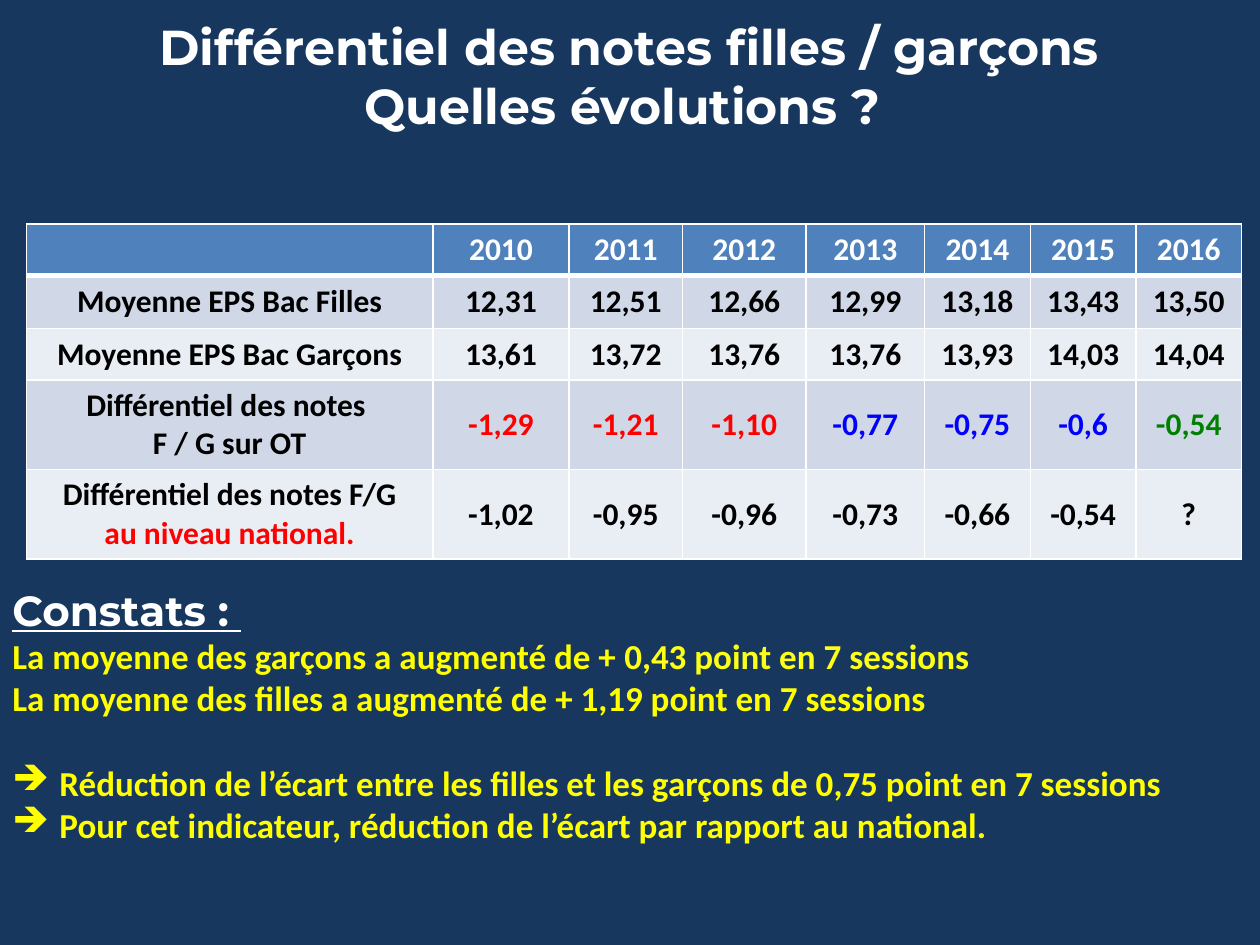
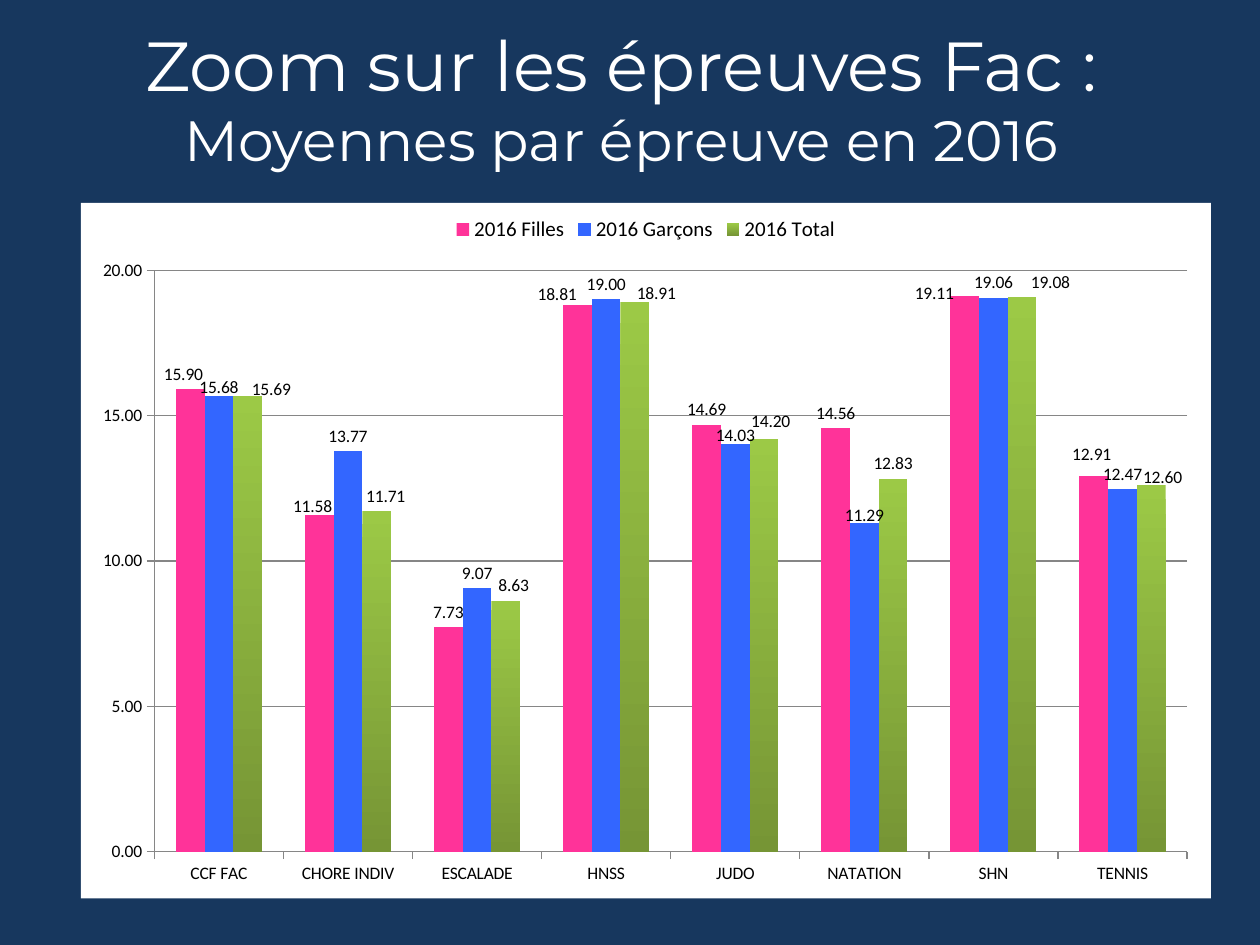
from dataclasses import dataclass
from typing import Optional

from lxml.etree import SubElement
from pptx import Presentation
from pptx.chart.data import CategoryChartData
from pptx.dml.color import RGBColor
from pptx.enum.chart import XL_CHART_TYPE, XL_LABEL_POSITION, XL_LEGEND_POSITION, XL_TICK_MARK
from pptx.enum.text import MSO_ANCHOR, MSO_AUTO_SIZE, PP_ALIGN
from pptx.oxml import parse_xml
from pptx.oxml.ns import nsdecls, qn
from pptx.util import Cm, Pt

NAVY = RGBColor(0x17, 0x37, 0x5E)
WHITE = RGBColor(0xFF, 0xFF, 0xFF)
BLACK = RGBColor(0x00, 0x00, 0x00)
YELLOW = RGBColor(0xFF, 0xFF, 0x00)
LEMON = RGBColor(0xFD, 0xFF, 0x17)
RED = RGBColor(0xFF, 0x00, 0x00)
BLUE = RGBColor(0x00, 0x00, 0xFF)
GREEN = RGBColor(0x00, 0x80, 0x00)
STEEL = RGBColor(0x4F, 0x81, 0xBD)
MIST = RGBColor(0xD0, 0xD8, 0xE8)
PALE = RGBColor(0xE9, 0xED, 0xF4)
GREY = RGBColor(0x86, 0x86, 0x86)
PINK = RGBColor(0xFF, 0x33, 0x99)
AZURE = RGBColor(0x33, 0x66, 0xFF)
LIME = RGBColor(0x9C, 0xC9, 0x46)
OLIVE = RGBColor(0x76, 0x95, 0x35)
HEAD = "Montserrat"
BODY = "Calibri"


@dataclass
class Box:
    left: float
    top: float
    width: float
    height: float

    def lengths(self) -> tuple:
        return Cm(self.left), Cm(self.top), Cm(self.width), Cm(self.height)


@dataclass
class Line:
    text: str
    size: float
    bold: bool = False


@dataclass
class Row:
    label: list
    marks: list
    height: float
    tints: list


@dataclass
class Group:
    name: str
    marks: list
    color: Optional[RGBColor]
    shifts: dict


ROWS = [
    Row([], [str(year) for year in range(2010, 2017)], 1.04, [WHITE] * 7),
    Row([("Moyenne EPS Bac Filles", BLACK)],
        ["12,31", "12,51", "12,66", "12,99", "13,18", "13,43", "13,50"], 1.06, [BLACK] * 7),
    Row([("Moyenne EPS Bac Garçons", BLACK)],
        ["13,61", "13,72", "13,76", "13,76", "13,93", "14,03", "14,04"], 1.04, [BLACK] * 7),
    Row([("Différentiel des notes ", BLACK), ("F / G sur OT", BLACK)],
        ["-1,29", "-1,21", "-1,10", "-0,77", "-0,75", "-0,6", "-0,54"], 1.78,
        [RED] * 3 + [BLUE] * 3 + [GREEN]),
    Row([("Différentiel des notes F/G", BLACK), ("au niveau national.", RED)],
        ["-1,02", "-0,95", "-0,96", "-0,73", "-0,66", "-0,54", "?"], 1.78, [BLACK] * 7),
]
WIDTHS = [8.2, 2.74, 2.29, 2.49, 2.39, 2.13, 2.13, 2.13]

TESTS = ["CCF FAC", "CHORE INDIV", "ESCALADE", "HNSS", "JUDO", "NATATION", "SHN", "TENNIS"]
GROUPS = [
    Group("2016 Filles", [15.9, 11.58, 7.73, 18.81, 14.69, 14.56, 19.11, 12.91], PINK,
          {0: (-0.6, 0), 1: (-0.6, 0.9), 3: (-1.8, 0.6), 6: (-2.7, 1.7), 7: (-0.2, -1)}),
    Group("2016 Garçons", [15.68, 13.77, 9.07, 19, 14.03, 11.29, 19.06, 12.47], AZURE,
          {0: (0, 0.9), 4: (0, 0.9), 5: (0, 1)}),
    Group("2016 Total", [15.69, 11.71, 8.63, 18.91, 14.2, 12.83, 19.08, 12.6], None,
          {0: (2.1, 1.3), 1: (0.8, 0), 2: (0.7, 0), 3: (1.9, 0.9), 4: (0.6, -0.4),
           6: (2.5, 0.1), 7: (1, 1)}),
]


def write(frame, text: str, *, para=None, size: float = 20, font: str = BODY,
          color: RGBColor = WHITE, bold: bool = True, under: bool = False,
          align: PP_ALIGN = PP_ALIGN.LEFT, bullet: str = "", before: float = 0):
    if para is None:
        first = frame.paragraphs[0]
        para = frame.add_paragraph() if first.runs else first
        para.alignment = align
        if bullet:
            props = para._p.get_or_add_pPr()
            props.set("marL", str(Cm(0.95)))
            props.set("indent", str(-Cm(0.95)))
            SubElement(props, qn("a:buChar")).set("char", bullet)
        if before:
            para.space_before = Pt(before)
    run = para.add_run()
    run.text = text
    run.font.size = Pt(size)
    run.font.name = font
    run.font.bold = bold
    run.font.underline = under
    run.font.color.rgb = color
    return para


def add_page(deck, box: Box, lines: list, anchor: MSO_ANCHOR):
    slide = deck.slides.add_slide(deck.slide_layouts[5])
    title = slide.shapes.title
    title.left, title.top, title.width, title.height = box.lengths()
    frame = title.text_frame
    frame.auto_size = MSO_AUTO_SIZE.NONE
    frame.vertical_anchor = anchor
    for line in lines:
        write(frame, line.text, size=line.size, font=HEAD, bold=line.bold,
              align=PP_ALIGN.CENTER)
    return slide


def edge(cell, sides: dict) -> None:
    props = cell._tc.get_or_add_tcPr()
    for place, (side, width) in enumerate(sides.items()):
        props.insert(place, parse_xml(
            f'<a:{side} {nsdecls("a")} w="{Pt(width)}"><a:solidFill>'
            f'<a:srgbClr val="{WHITE}"/></a:solidFill></a:{side}>'))


def add_grid(slide, box: Box) -> None:
    table = slide.shapes.add_table(len(ROWS), len(WIDTHS), *box.lengths()).table
    for column, width in zip(table.columns, WIDTHS):
        column.width = Cm(width)
    for at, row in enumerate(ROWS):
        table.rows[at].height = Cm(row.height)
        fill = STEEL if at == 0 else MIST if at % 2 else PALE
        parts = [row.label] + [[pair] for pair in zip(row.marks, row.tints)]
        for cell, lines in zip(table.rows[at].cells, parts):
            cell.fill.solid()
            cell.fill.fore_color.rgb = fill
            cell.vertical_anchor = MSO_ANCHOR.MIDDLE
            edge(cell, {"lnL": 1, "lnR": 1, "lnT": 3 if at == 1 else 1,
                        "lnB": 3 if at == 0 else 1})
            for text, color in lines:
                write(cell.text_frame, text, size=18, color=color, align=PP_ALIGN.CENTER)


def add_notes(slide, box: Box) -> None:
    frame = slide.shapes.add_textbox(*box.lengths()).text_frame
    frame.word_wrap = True
    write(frame, "Constats : ", size=24, font=HEAD, under=True)
    para = write(frame, "La moyenne des garçons a augmenté de + ", color=YELLOW)
    write(frame, "0,43 point en 7 sessions", para=para, color=LEMON)
    write(frame, "La moyenne des filles a augmenté de + 1,19 point en 7 sessions", color=YELLOW)
    write(frame, "Réduction de l’écart entre les filles et les garçons de 0,75 point en 7 sessions",
          color=YELLOW, bullet="➔", before=24)
    write(frame, "Pour cet indicateur, réduction de l’écart par rapport au national.",
          color=YELLOW, bullet="➔")


def layout(**parts):
    inner = "".join(f'<c:{key} val="{value}"/>' for key, value in parts.items())
    return parse_xml(f'<c:layout {nsdecls("c")}><c:manualLayout>{inner}'
                     f'</c:manualLayout></c:layout>')


def tag(series, group: Group) -> None:
    labels = series.data_labels
    labels.show_value = True
    labels.number_format = "0.00"
    labels.number_format_is_linked = False
    labels.position = XL_LABEL_POSITION.OUTSIDE_END
    for point in group.shifts:
        series.points[point].data_label.position = XL_LABEL_POSITION.OUTSIDE_END
    for label in labels._element.findall(qn("c:dLbl")):
        mark = label.find(qn("c:idx"))
        across, down = group.shifts[int(mark.get("val"))]
        mark.addnext(parse_xml(
            f'<c:numFmt {nsdecls("c")} formatCode="0.00" sourceLinked="0"/>'))
        mark.addnext(layout(x=across / 100, y=down / 100))


def add_bars(slide, box: Box) -> None:
    data = CategoryChartData(number_format="0.00")
    data.categories = TESTS
    for group in GROUPS:
        data.add_series(group.name, group.marks)
    chart = slide.shapes.add_chart(XL_CHART_TYPE.COLUMN_CLUSTERED, *box.lengths(), data).chart
    chart.has_title = False
    chart.font.size = Pt(10)
    chart.font.name = BODY
    chart.font.color.rgb = BLACK
    chart.has_legend = True
    chart.legend.position = XL_LEGEND_POSITION.TOP
    chart.legend.include_in_layout = False
    chart.legend.font.size = Pt(12)
    chart.legend.font.name = BODY
    chart.legend.font.color.rgb = BLACK

    scale = chart.value_axis
    scale.minimum_scale, scale.maximum_scale, scale.major_unit = 0, 20, 5
    scale.tick_labels.number_format = "0.00"
    scale.tick_labels.number_format_is_linked = False
    scale.has_major_gridlines = True
    scale.major_gridlines.format.line.color.rgb = GREY
    for axis in (scale, chart.category_axis):
        axis.major_tick_mark = XL_TICK_MARK.OUTSIDE
        axis.format.line.color.rgb = GREY

    plot = chart.plots[0]
    plot.gap_width = 150
    plot.overlap = 0
    plot.vary_by_categories = False
    for series, group in zip(plot.series, GROUPS):
        fill = series.format.fill
        if group.color is None:
            fill.gradient()
            fill.gradient_angle = 270
            for stop, color in zip(fill.gradient_stops, (LIME, OLIVE)):
                stop.color.rgb = color
        else:
            fill.solid()
            fill.fore_color.rgb = group.color
        tag(series, group)

    root = chart._chartSpace
    area = root.find(qn("c:chart")).find(qn("c:plotArea"))
    for old in area.findall(qn("c:layout")):
        area.remove(old)
    area.insert(0, layout(layoutTarget="inner", xMode="edge", yMode="edge",
                          x=0.065, y=0.097, w=0.914, h=0.836))
    root.find(qn("c:chart")).addnext(parse_xml(
        f'<c:spPr {nsdecls("c", "a")}><a:solidFill><a:srgbClr val="{WHITE}"/></a:solidFill>'
        f'<a:ln><a:noFill/></a:ln></c:spPr>'))


def main() -> None:
    deck = Presentation()
    deck.slide_width, deck.slide_height = Cm(25.4), Cm(19.05)
    back = deck.slide_master.background.fill
    back.solid()
    back.fore_color.rgb = NAVY

    trend = add_page(deck, Box(0.71, 0.2, 23.95, 2.64),
                     [Line("Différentiel des notes filles / garçons", 28, True),
                      Line("Quelles évolutions ? ", 28, True)], MSO_ANCHOR.TOP)
    add_grid(trend, Box(0.53, 4.52, 24.5, 6.7))
    add_notes(trend, Box(0, 11.66, 25.4, 5.56))

    zoom = add_page(deck, Box(1.09, 0.38, 22.86, 3.18),
                    [Line("Zoom sur les épreuves Fac :", 39.6),
                     Line("Moyennes par épreuve en 2016", 32.4)], MSO_ANCHOR.MIDDLE)
    add_bars(zoom, Box(1.63, 4.09, 22.78, 14.02))
    deck.save("out.pptx")


if __name__ == "__main__":
    main()
